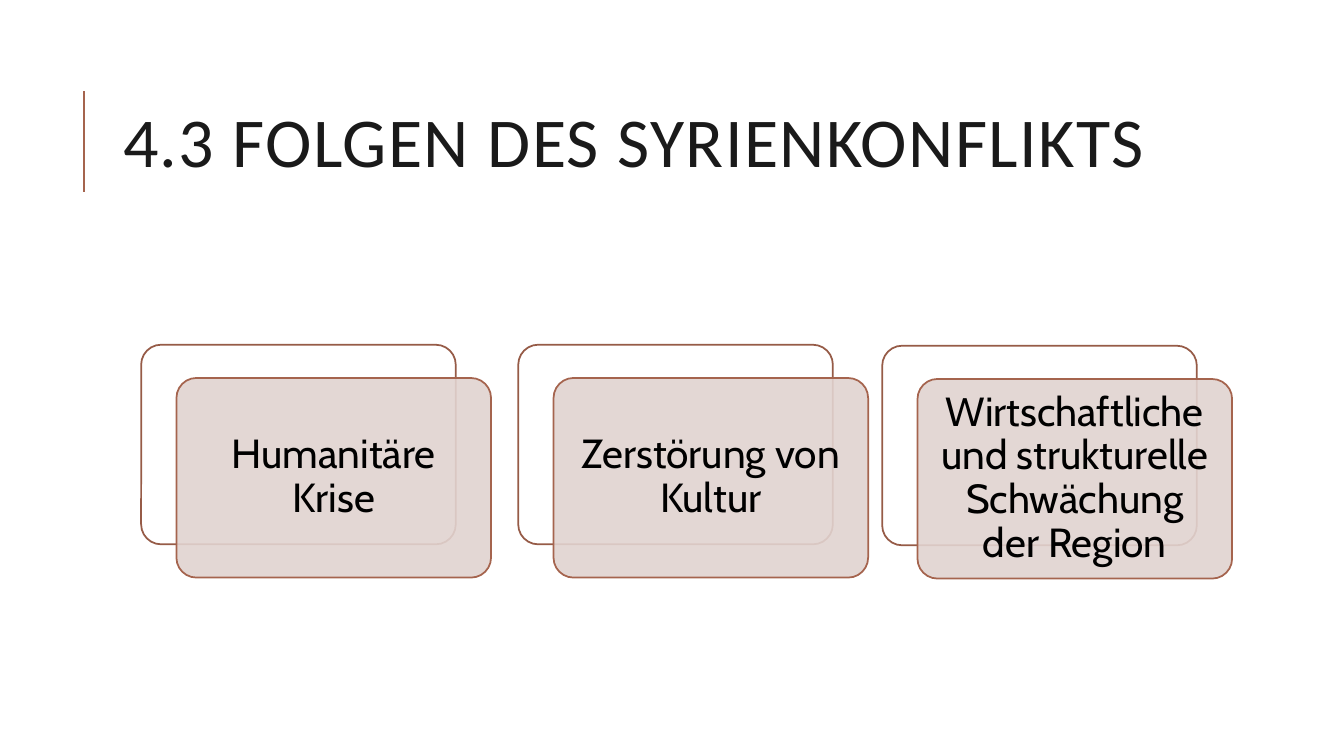
"""Build the slide on the consequences of the Syrian conflict."""
from lxml.etree import SubElement
from pptx import Presentation
from pptx.dml.color import RGBColor as RGB
from pptx.enum.shapes import MSO_CONNECTOR as LINE, MSO_SHAPE as SHAPE
from pptx.enum.text import MSO_ANCHOR as ANCHOR, MSO_AUTO_SIZE as AUTO, PP_ALIGN as ALIGN
from pptx.oxml.ns import qn
from pptx.util import Inches, Pt

HEX = {"ink": "1A1A1A", "black": "000000", "white": "FFFFFF",
       "rust": "A5644E", "brown": "965B47", "rose": "E1D3D0"}
CARDS = [
    (1.4, 3.42, "Humanitäre Krise"),
    (5.14, 3.42, "Zerstörung von Kultur"),
    (8.75, 3.43, "Wirtschaftliche und strukturelle Schwächung der Region"),
]
SIZE = (3.12, 1.98)
SHIFT = (0.35, 0.33)


def color(name):
    return RGB.from_string(HEX[name])


def apply(item, values):
    for key, value in values.items():
        setattr(item, key, value)


def write(shape, text, font, tint, frame, para):
    body = shape.text_frame
    apply(body, {"word_wrap": True, "auto_size": AUTO.NONE,
                 "vertical_anchor": ANCHOR.MIDDLE, **frame})
    line = body.paragraphs[0]
    apply(line, para)
    run = line.add_run()
    run.text = text
    apply(run.font, font)
    run.font.color.rgb = color(tint)
    return run


def add_title(slide, text):
    title = slide.shapes.title
    apply(title, {"left": Inches(1.12), "top": Inches(0.64),
                  "width": Inches(10.63), "height": Inches(1.64)})
    run = write(title, text, {"name": "Calibri", "size": Pt(50)}, "ink", {},
                {"alignment": ALIGN.LEFT, "line_spacing": 0.8})
    run.font._element.set("spc", "100")


def add_rule(slide, x, start, end):
    rule = slide.shapes.add_connector(
        LINE.STRAIGHT, Inches(x), Inches(start), Inches(x), Inches(end))
    rule.line.color.rgb = color("rust")
    rule.line.width = Pt(1.5)
    SubElement(rule._element.spPr, qn("a:effectLst"))


def add_box(slide, x, y, fill, edge):
    box = slide.shapes.add_shape(
        SHAPE.ROUNDED_RECTANGLE, *map(Inches, (x, y, *SIZE)))
    box.adjustments[0] = 0.1
    box.shadow.inherit = False
    box.fill.solid()
    box.fill.fore_color.rgb = color(fill)
    box.line.color.rgb = color(edge)
    box.line.width = Pt(1.25)
    return box


def add_card(slide, x, y, text):
    add_box(slide, x, y, "white", "brown")
    front = add_box(slide, x + SHIFT[0], y + SHIFT[1], "rose", "rust")
    tone = front._element.spPr.find(qn("a:solidFill"))[0]
    SubElement(tone, qn("a:alpha"), val="90000")
    sides = ("left", "top", "right", "bottom")
    write(front, text, {"name": "Cabin", "size": Pt(29)}, "black",
          {f"margin_{side}": Inches(0.12) for side in sides},
          {"alignment": ALIGN.CENTER, "line_spacing": 0.9})


def main():
    deck = Presentation()
    apply(deck, {"slide_width": Inches(13.33), "slide_height": Inches(7.5)})
    slide = deck.slides.add_slide(deck.slide_layouts[5])
    add_rule(slide, 0.83, 1.9, 0.9)
    add_title(slide, "4.3 FOLGEN DES SYRIENKONFLIKTS")
    for card in CARDS:
        add_card(slide, *card)
    deck.save("out.pptx")


if __name__ == "__main__":
    main()
